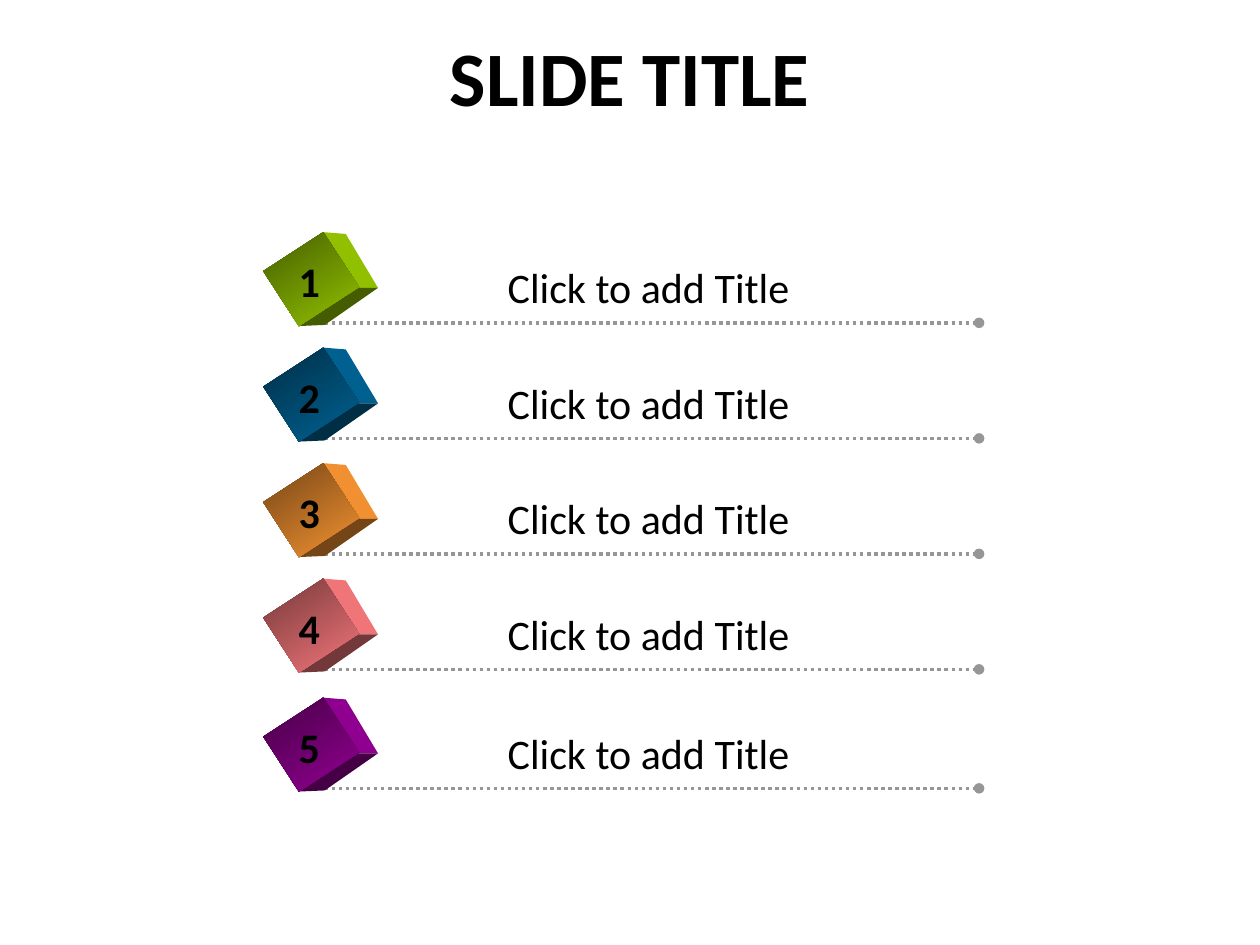
"""Build a slide with five numbered cubes, each beside an underlined heading."""
from dataclasses import dataclass

from lxml.etree import SubElement
from pptx import Presentation
from pptx.dml.color import RGBColor
from pptx.enum.dml import MSO_LINE_DASH_STYLE as Dash
from pptx.enum.shapes import MSO_CONNECTOR as Connector, MSO_SHAPE as Shape
from pptx.enum.text import MSO_ANCHOR as Anchor, MSO_AUTO_SIZE as AutoSize, PP_ALIGN as Align
from pptx.oxml.ns import qn
from pptx.shapes.shapetree import GroupShapes
from pptx.text.text import TextFrame
from pptx.util import Pt

CUBE_LEFT = 159
RIGHT_FACE = [(25, -6.4), (38.6, -5.3), (57, 25.5), (43.8, 25.5)]
BOTTOM_FACE = [(12.3, 47.3), (43.8, 25.5), (57, 25.5), (26.6, 46.7)]


@dataclass
class Item:
    number: str
    heading: str
    top: float
    color: str


def rgb(color: str, brightness: float = 1) -> RGBColor:
    return RGBColor(*(round(part * brightness) for part in RGBColor.from_string(color)))


def write(frame: TextFrame, text: str, *, size: float = 24, bold: bool = False,
          align: Align = Align.LEFT, spacing: float = 1) -> None:
    paragraph = frame.paragraphs[0]
    paragraph.alignment = align
    paragraph.line_spacing = spacing
    run = paragraph.add_run()
    run.text = text
    run.font.name = "Calibri"
    run.font.size = Pt(size)
    run.font.bold = bold
    run.font.color.rgb = rgb("000000")


def add_label(shapes: GroupShapes, text: str, left: float, top: float,
              width: float, *, bold: bool = False) -> None:
    frame = shapes.add_textbox(Pt(left), Pt(top), Pt(width), Pt(36.5)).text_frame
    frame.word_wrap = False
    frame.auto_size = AutoSize.SHAPE_TO_FIT_TEXT
    write(frame, text, bold=bold)


def add_underline(shapes: GroupShapes, y: float) -> None:
    underline = shapes.add_connector(Connector.STRAIGHT, Pt(181.5), Pt(y), Pt(559.5), Pt(y))
    underline.line.color.rgb = rgb("969696")
    underline.line.width = Pt(2)
    underline.line.dash_style = Dash.ROUND_DOT
    SubElement(underline.line._get_or_add_ln(), qn("a:tailEnd"), type="oval")
    SubElement(underline._element.spPr, qn("a:effectLst"))


def add_side(shapes: GroupShapes, corners: list[tuple[float, float]], top: float,
             color: RGBColor) -> None:
    points = [(Pt(CUBE_LEFT + x), Pt(top + y)) for x, y in corners]
    builder = shapes.build_freeform(*points[0])
    builder.add_line_segments(points[1:], close=True)
    side = builder.convert_to_shape()
    side.shadow.inherit = False
    side.fill.solid()
    side.fill.fore_color.rgb = color
    side.line.fill.background()


def add_cube(shapes: GroupShapes, top: float, color: str) -> None:
    add_side(shapes, RIGHT_FACE, top, rgb(color, 0.94))
    add_side(shapes, BOTTOM_FACE, top, rgb(color, 0.45))
    front = shapes.add_shape(Shape.RECTANGLE, Pt(CUBE_LEFT), Pt(top), Pt(37.5), Pt(41))
    front.rotation = 57
    front.shadow.inherit = False
    front.line.fill.background()
    front.fill.gradient()
    front.fill.gradient_angle = 0
    for stop, brightness in zip(front.fill.gradient_stops, (0.45, 0.96)):
        stop.color.rgb = rgb(color, brightness)


def add_item(shapes: GroupShapes, item: Item) -> None:
    add_underline(shapes, item.top + 45.5)
    add_cube(shapes, item.top, item.color)
    add_label(shapes, item.heading, 283, item.top + 7, 177)
    add_label(shapes, item.number, 163.5, item.top + 3.5, 26.5, bold=True)


def main() -> None:
    presentation = Presentation()
    presentation.slide_width, presentation.slide_height = Pt(720), Pt(540)
    slide = presentation.slides.add_slide(presentation.slide_layouts[5])

    title = slide.shapes.title
    title.left, title.top, title.width, title.height = Pt(17.5), Pt(11.5), Pt(685), Pt(70.5)
    title.text_frame.vertical_anchor = Anchor.MIDDLE
    write(title.text_frame, "SLIDE TITLE", size=44, bold=True, align=Align.CENTER, spacing=0.9)

    heading = "Click to add Title"
    items = [
        Item("1", heading, 139, "99CC00"),
        Item("2", heading, 205, "006699"),
        Item("3", heading, 271, "FF9933"),
        Item("4", heading, 337, "FF7C80"),
        Item("5", heading, 405, "990099"),
    ]
    for item in items:
        add_item(slide.shapes.add_group_shape().shapes, item)

    presentation.save("out.pptx")


if __name__ == "__main__":
    main()
